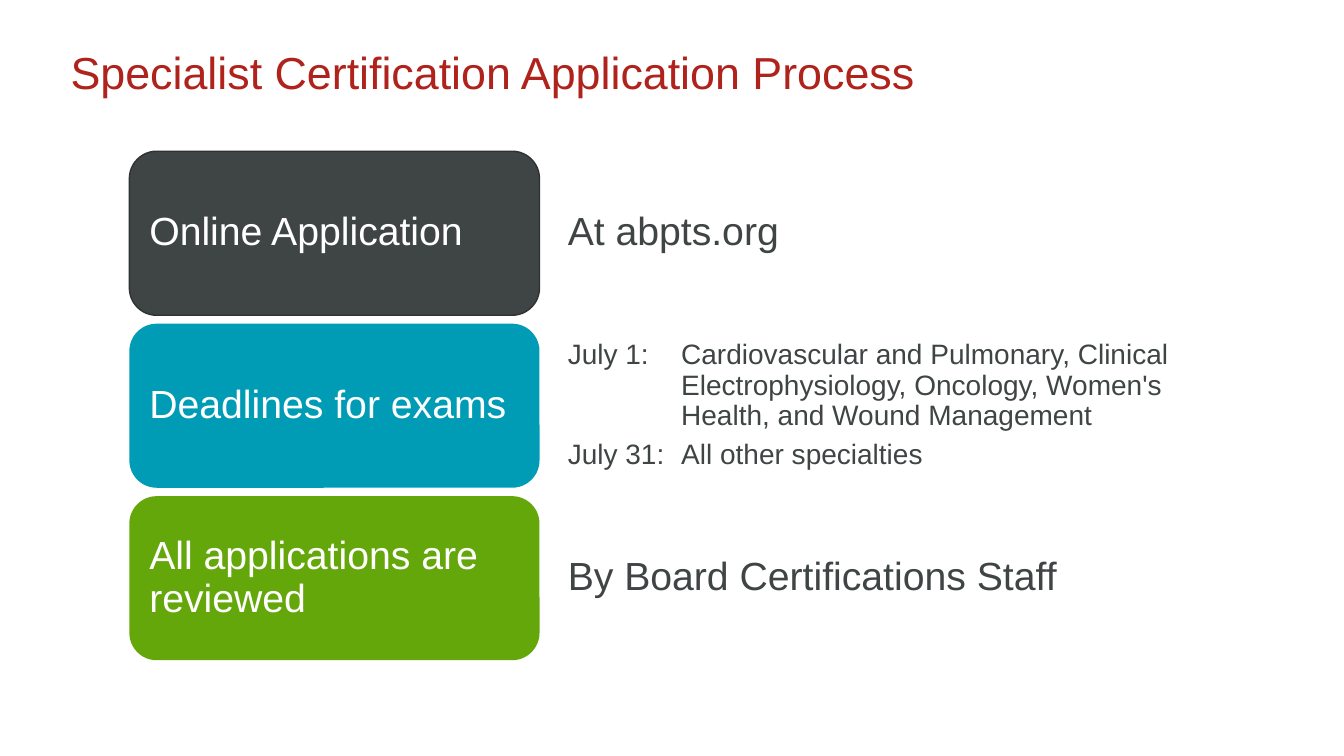
import pptx
import pptx.util
import pptx.dml.color
import pptx.enum.shapes
import pptx.enum.text

Pt = pptx.util.Pt
ANCHOR = pptx.enum.text.MSO_ANCHOR
COLORS = {
    "title": "AF231C",
    "text": "3F4444",
    "white": "FFFFFF",
    "slate": "3F4444",
    "slate_edge": "2F3232",
    "teal": "009CB6",
    "green": "64A70B",
}
STEPS = [
    {"label": "Online Application", "fill": "slate", "edge": "slate_edge",
     "details": ["At abpts.org"], "size": 28, "hanging": 0},
    {"label": "Deadlines for exams", "fill": "teal", "edge": None,
     "details": [
         "July 1:\tCardiovascular and Pulmonary, Clinical Electrophysiology, "
         "Oncology, Women's Health, and Wound Management",
         "July 31:\tAll other specialties"],
     "size": 20, "hanging": 81},
    {"label": "All applications are reviewed", "fill": "green", "edge": None,
     "details": ["By Board Certifications Staff"], "size": 28, "hanging": 0},
]
CARD_WIDTH = 293
ROW_GAP = 6


def color(name):
    return pptx.dml.color.RGBColor.from_string(COLORS[name])


def set_attributes(target, values):
    for name, value in values.items():
        setattr(target, name, value)


def write_text(shape, lines, size, color_name, anchor, inset_x, inset_y, hanging=0):
    frame = shape.text_frame
    set_attributes(frame, {
        "word_wrap": True,
        "auto_size": pptx.enum.text.MSO_AUTO_SIZE.NONE,
        "vertical_anchor": anchor,
        "margin_left": Pt(inset_x), "margin_right": Pt(inset_x),
        "margin_top": Pt(inset_y), "margin_bottom": Pt(inset_y),
    })
    for index, line in enumerate(lines):
        paragraph = frame.paragraphs[0] if index == 0 else frame.add_paragraph()
        paragraph.text = line
        set_attributes(paragraph, {
            "alignment": pptx.enum.text.PP_ALIGN.LEFT,
            "line_spacing": 0.9,
            "space_before": Pt(6.4 if index else 0),
        })
        if hanging:
            properties = paragraph._p.get_or_add_pPr()
            properties.set("marL", str(Pt(hanging)))
            properties.set("indent", str(Pt(-hanging)))
        set_attributes(paragraph.font, {"name": "Arial", "size": Pt(size)})
        paragraph.font.color.rgb = color(color_name)


def add_title(slide, left, top, width, height):
    title = slide.shapes.title
    set_attributes(title, {"left": Pt(left), "top": Pt(top),
                           "width": Pt(width), "height": Pt(height)})
    write_text(title, ["Specialist Certification Application Process"],
               32, "title", ANCHOR.TOP, 0, 0)


def add_step(slide, step, left, top, width, height):
    card = slide.shapes.add_shape(
        pptx.enum.shapes.MSO_SHAPE.ROUNDED_RECTANGLE,
        Pt(left), Pt(top), Pt(CARD_WIDTH), Pt(height))
    card.shadow.inherit = False
    card.fill.solid()
    card.fill.fore_color.rgb = color(step["fill"])
    if step["edge"]:
        card.line.color.rgb = color(step["edge"])
        card.line.width = Pt(1)
    else:
        card.line.fill.background()
    write_text(card, [step["label"]], 28, "white", ANCHOR.MIDDLE, 8.6, 4.3)

    details = slide.shapes.add_textbox(
        Pt(left + CARD_WIDTH + 1), Pt(top),
        Pt(width - CARD_WIDTH - 1), Pt(height))
    write_text(details, step["details"], step["size"], "text",
               ANCHOR.MIDDLE, 19.2, 9.6, step["hanging"])


def add_steps(slide, left, top, width, height):
    row_height = (height - ROW_GAP * (len(STEPS) - 1)) / len(STEPS)
    for index, step in enumerate(STEPS):
        add_step(slide, step, left, top + index * (row_height + ROW_GAP),
                 width, row_height)


def main():
    presentation = pptx.Presentation()
    set_attributes(presentation, {"slide_width": Pt(960), "slide_height": Pt(540)})
    slide = presentation.slides.add_slide(presentation.slide_layouts[5])
    add_title(slide, 50.4, 36, 792, 72)
    add_steps(slide, 92.4, 108, 804, 363.6)
    presentation.save("out.pptx")


if __name__ == "__main__":
    main()
